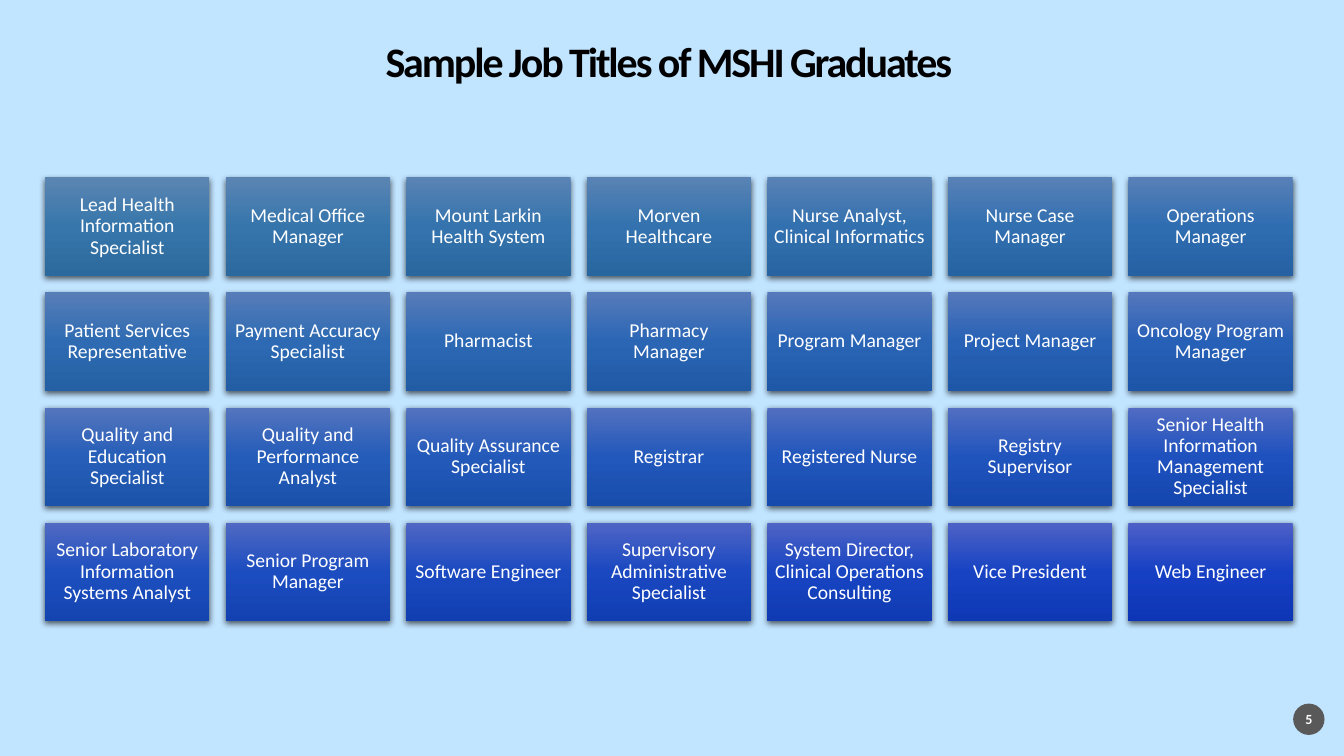
import colorsys
import copy
import dataclasses

import lxml.etree
import pptx
import pptx.dml.color
import pptx.enum.shapes
import pptx.enum.text
import pptx.oxml.ns
import pptx.shapes.autoshape
import pptx.slide
import pptx.util

Cm = pptx.util.Cm
qn = pptx.oxml.ns.qn

FONT = "Calibri"
COLORS = {
    "background": "C1E4FF",
    "title": "000000",
    "white": "FFFFFF",
    "badge": "595959",
    "shadow": "000000",
}
FIRST_TILE_STOPS = ("5B86B2", "3776AB", "2C6A9D")
LAST_TILE_STOPS = ("4E60C7", "1640C4", "0D35B5")

COLUMNS = 7
TILE_LEFT, TILE_TOP = 1.14, 4.47
TILE_WIDTH, TILE_HEIGHT = 4.14, 2.48
COLUMN_STEP, ROW_STEP = 4.55, 2.9

JOB_TITLES = (
    "Lead Health Information Specialist", "Medical Office Manager",
    "Mount Larkin Health System", "Morven Healthcare",
    "Nurse Analyst, Clinical Informatics", "Nurse Case Manager",
    "Operations Manager",
    "Patient Services Representative", "Payment Accuracy Specialist",
    "Pharmacist", "Pharmacy Manager", "Program Manager", "Project Manager",
    "Oncology Program Manager",
    "Quality and Education Specialist", "Quality and Performance Analyst",
    "Quality Assurance Specialist", "Registrar", "Registered Nurse",
    "Registry Supervisor", "Senior Health Information Management Specialist",
    "Senior Laboratory Information Systems Analyst", "Senior Program Manager",
    "Software Engineer", "Supervisory Administrative Specialist",
    "System Director, Clinical Operations Consulting", "Vice President",
    "Web Engineer",
)


@dataclasses.dataclass(frozen=True)
class Label:
    text: str
    size: float
    color: str = "white"
    bold: bool = False
    inset: float = 0
    line_spacing: float = 0.9
    tracking: int = 0


@dataclasses.dataclass(frozen=True)
class Tile:
    label: Label
    left: float
    top: float
    stops: tuple[str, ...]


def rgb(value: str) -> pptx.dml.color.RGBColor:
    return pptx.dml.color.RGBColor.from_string(value)


def blend(first: str, last: str, share: float) -> str:
    start, end = (
        colorsys.rgb_to_hls(*(channel / 255 for channel in rgb(value)))
        for value in (first, last)
    )
    mixed = (a + (b - a) * share for a, b in zip(start, end))
    return "".join(f"{round(channel * 255):02X}" for channel in colorsys.hls_to_rgb(*mixed))


def write_label(box: pptx.shapes.autoshape.Shape, label: Label) -> None:
    frame = box.text_frame
    frame.word_wrap = True
    frame.vertical_anchor = pptx.enum.text.MSO_ANCHOR.MIDDLE
    frame.margin_left = frame.margin_right = Cm(label.inset)
    frame.margin_top = frame.margin_bottom = Cm(label.inset)
    para = frame.paragraphs[0]
    para.alignment = pptx.enum.text.PP_ALIGN.CENTER
    para.line_spacing = label.line_spacing
    span = para.add_run()
    span.text = label.text
    span.font.name = FONT
    span.font.size = pptx.util.Pt(label.size)
    span.font.bold = label.bold
    span.font.color.rgb = rgb(COLORS[label.color])
    if label.tracking:
        span.font._element.set("spc", str(label.tracking))


def fill_gradient(box: pptx.shapes.autoshape.Shape, colors: tuple[str, ...]) -> None:
    box.fill.gradient()
    box.fill.gradient_angle = 270
    stop_list = box.element.spPr.find(f".//{qn('a:gsLst')}")
    stop_list.insert(1, copy.deepcopy(stop_list[0]))
    for index, (stop, color) in enumerate(zip(box.fill.gradient_stops, colors)):
        stop.position = index / (len(colors) - 1)
        stop.color.rgb = rgb(color)


def add_shadow(box: pptx.shapes.autoshape.Shape) -> None:
    effects = box.element.spPr.find(qn("a:effectLst"))
    shadow = lxml.etree.SubElement(
        effects,
        qn("a:outerShdw"),
        blurRad=str(pptx.util.Pt(4.5)),
        dist=str(pptx.util.Pt(1.5)),
        dir="5400000",
        algn="ctr",
        rotWithShape="0",
    )
    color = lxml.etree.SubElement(shadow, qn("a:srgbClr"), val=COLORS["shadow"])
    lxml.etree.SubElement(color, qn("a:alpha"), val="63000")


def add_tile(page: pptx.slide.Slide, tile: Tile) -> None:
    box = page.shapes.add_shape(
        pptx.enum.shapes.MSO_SHAPE.RECTANGLE,
        Cm(tile.left), Cm(tile.top), Cm(TILE_WIDTH), Cm(TILE_HEIGHT),
    )
    fill_gradient(box, tile.stops)
    box.line.fill.background()
    box.shadow.inherit = False
    add_shadow(box)
    write_label(box, tile.label)


def make_tiles() -> list[Tile]:
    tiles = []
    for index, job_title in enumerate(JOB_TITLES):
        row, column = divmod(index, COLUMNS)
        share = index / (len(JOB_TITLES) - 1)
        tiles.append(Tile(
            Label(job_title, 14, inset=0.15),
            TILE_LEFT + column * COLUMN_STEP,
            TILE_TOP + row * ROW_STEP,
            tuple(blend(first, last, share)
                  for first, last in zip(FIRST_TILE_STOPS, LAST_TILE_STOPS)),
        ))
    return tiles


def add_title(page: pptx.slide.Slide) -> None:
    box = page.shapes.add_textbox(Cm(1.12), Cm(1.02), Cm(31.47), Cm(1.19))
    write_label(box, Label("Sample Job Titles of MSHI Graduates", 30, "title", True, tracking=-150))


def add_page_number(page: pptx.slide.Slide) -> None:
    badge = page.shapes.add_shape(
        pptx.enum.shapes.MSO_SHAPE.OVAL, Cm(32.59), Cm(17.73), Cm(0.79), Cm(0.79)
    )
    badge.fill.solid()
    badge.fill.fore_color.rgb = rgb(COLORS["badge"])
    badge.line.fill.background()
    badge.shadow.inherit = False
    write_label(badge, Label("5", 10, bold=True, line_spacing=1.0))


def main() -> None:
    deck = pptx.Presentation()
    deck.slide_width, deck.slide_height = Cm(33.87), Cm(19.05)
    page = deck.slides.add_slide(deck.slide_layouts[6])
    page.background.fill.solid()
    page.background.fill.fore_color.rgb = rgb(COLORS["background"])
    add_title(page)
    add_page_number(page)
    for tile in make_tiles():
        add_tile(page, tile)
    deck.save("out.pptx")


if __name__ == "__main__":
    main()
